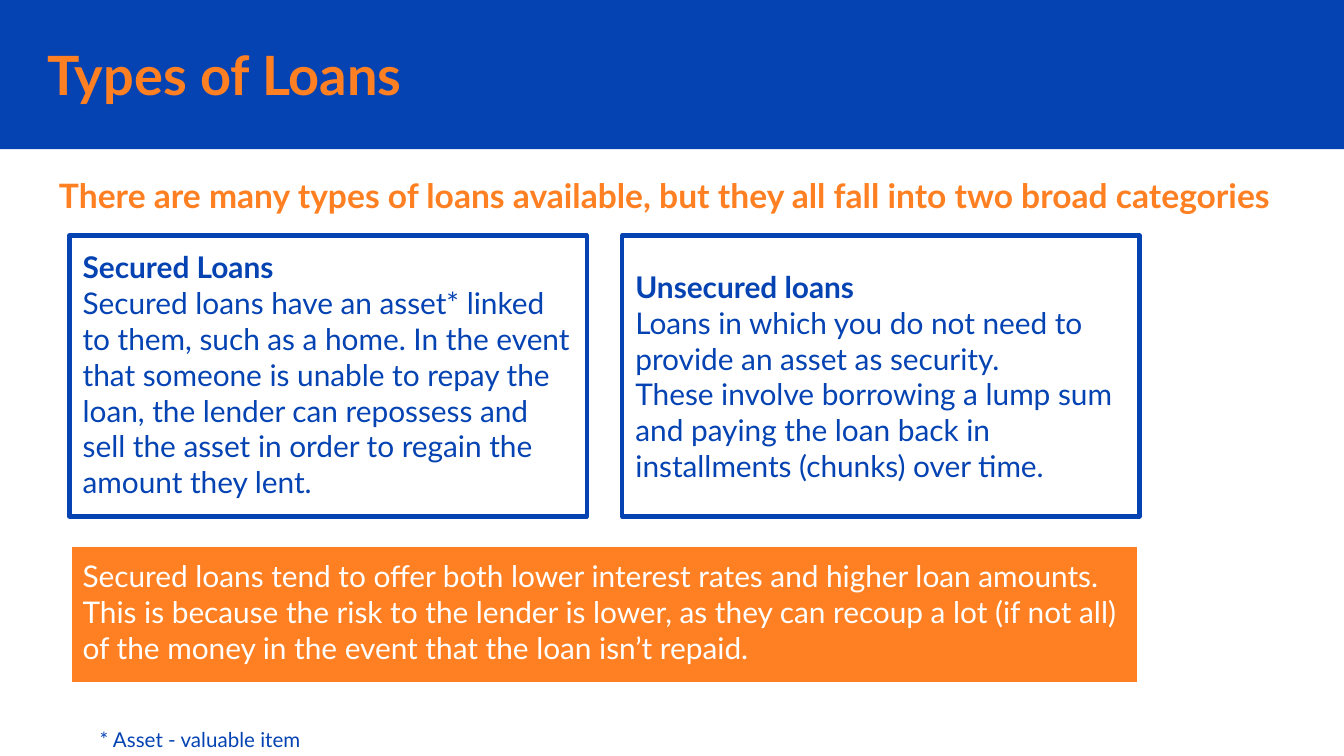
from pptx import Presentation
from pptx.dml.color import RGBColor
from pptx.enum.shapes import MSO_SHAPE as Shape
from pptx.enum.text import MSO_ANCHOR as Anchor, MSO_AUTO_SIZE as AutoSize, PP_ALIGN as Align
from pptx.util import Pt

BLUE = RGBColor(0x05, 0x43, 0xB3)
ORANGE = RGBColor(0xFF, 0x80, 0x22)
WHITE = RGBColor(0xFF, 0xFF, 0xFF)

FONT = "Lato"
INSET = Pt(7.2)
SLIDE_WIDTH, SLIDE_HEIGHT = 720, 405

# Loan cards: two equal columns, with the comparison panel spanning both
LEFT, CARD_WIDTH, CARD_GAP = 37.2, 277.2, 18.9
CARD_TOP, CARD_HEIGHT = 126.2, 150.5
PANEL_WIDTH = 2 * CARD_WIDTH + CARD_GAP

LOANS = [
    ("Secured Loans",
     ["Secured loans have an asset* linked to them, such as a home. In the event "
      "that someone is unable to repay the loan, the lender can repossess and sell "
      "the asset in order to regain the amount they lent."],
     Anchor.TOP),
    ("Unsecured loans",
     ["Loans in which you do not need to provide an asset as security.",
      "These involve borrowing a lump sum and paying the loan back in installments "
      "(chunks) over time."],
     Anchor.MIDDLE),
]
COMPARISON = (
    "Secured loans tend to offer both lower interest rates and higher loan amounts. "
    "This is because the risk to the lender is lower, as they can recoup a lot "
    "(if not all) of the money in the event that the loan isn’t repaid."
)


def write(holder, *lines, size, color, bold=False, bold_first=False, anchor=Anchor.TOP):
    """Fill a shape with one left-aligned paragraph per line."""
    frame = holder.text_frame
    frame.word_wrap = True
    frame.auto_size = AutoSize.NONE
    frame.vertical_anchor = anchor
    frame.margin_left = frame.margin_right = INSET
    frame.margin_top = frame.margin_bottom = INSET
    for index, line in enumerate(lines):
        paragraph = frame.paragraphs[0] if index == 0 else frame.add_paragraph()
        paragraph.alignment = Align.LEFT
        run = paragraph.add_run()
        run.text = line
        run.font.name = FONT
        run.font.size = Pt(size)
        run.font.bold = bold or (bold_first and index == 0)
        run.font.color.rgb = color


def add_box(slide, left, top, width, height, fill=None, line=None, line_width=2.25):
    """Add a flat rectangle, unfilled or unlined where no colour is given."""
    box = slide.shapes.add_shape(
        Shape.RECTANGLE, Pt(left), Pt(top), Pt(width), Pt(height))
    box.shadow.inherit = False
    if fill is None:
        box.fill.background()
    else:
        box.fill.solid()
        box.fill.fore_color.rgb = fill
    if line is None:
        box.line.fill.background()
    else:
        box.line.color.rgb = line
        box.line.width = Pt(line_width)
    return box


def add_header(slide):
    band = add_box(slide, 0, 0, SLIDE_WIDTH, 80, fill=BLUE)
    title = slide.shapes.title
    title.left, title.top, title.width, title.height = Pt(18), Pt(19.5), Pt(449), Pt(40)
    write(title, "Types of Loans", size=29, color=ORANGE, bold=True, anchor=Anchor.MIDDLE)
    # Keep the band behind the title
    title._element.addprevious(band._element)


def add_intro(slide):
    intro = slide.shapes.add_textbox(Pt(24.5), Pt(86.4), Pt(672), Pt(36))
    write(intro,
          "There are many types of loans available, but they all fall into two broad categories",
          size=18, color=ORANGE, bold=True)


def add_loan_cards(slide):
    for column, (heading, details, anchor) in enumerate(LOANS):
        left = LEFT + column * (CARD_WIDTH + CARD_GAP)
        card = add_box(slide, left, CARD_TOP, CARD_WIDTH, CARD_HEIGHT, line=BLUE)
        write(card, heading, *details, size=16, color=BLUE, bold_first=True, anchor=anchor)


def add_comparison(slide):
    panel = add_box(slide, LEFT, 291.8, PANEL_WIDTH, 75, fill=ORANGE, line=WHITE)
    write(panel, COMPARISON, size=16, color=WHITE)


def add_footnote(slide):
    footnote = add_box(slide, 46.3, 382.3, 433.4, 28, line=WHITE, line_width=0.75)
    write(footnote, "* Asset - valuable item", size=11, color=BLUE)


def main():
    deck = Presentation()
    deck.slide_width, deck.slide_height = Pt(SLIDE_WIDTH), Pt(SLIDE_HEIGHT)
    slide = deck.slides.add_slide(deck.slide_layouts.get_by_name("Title Only"))
    add_header(slide)
    add_intro(slide)
    add_footnote(slide)
    add_loan_cards(slide)
    add_comparison(slide)
    deck.save("out.pptx")


if __name__ == "__main__":
    main()
